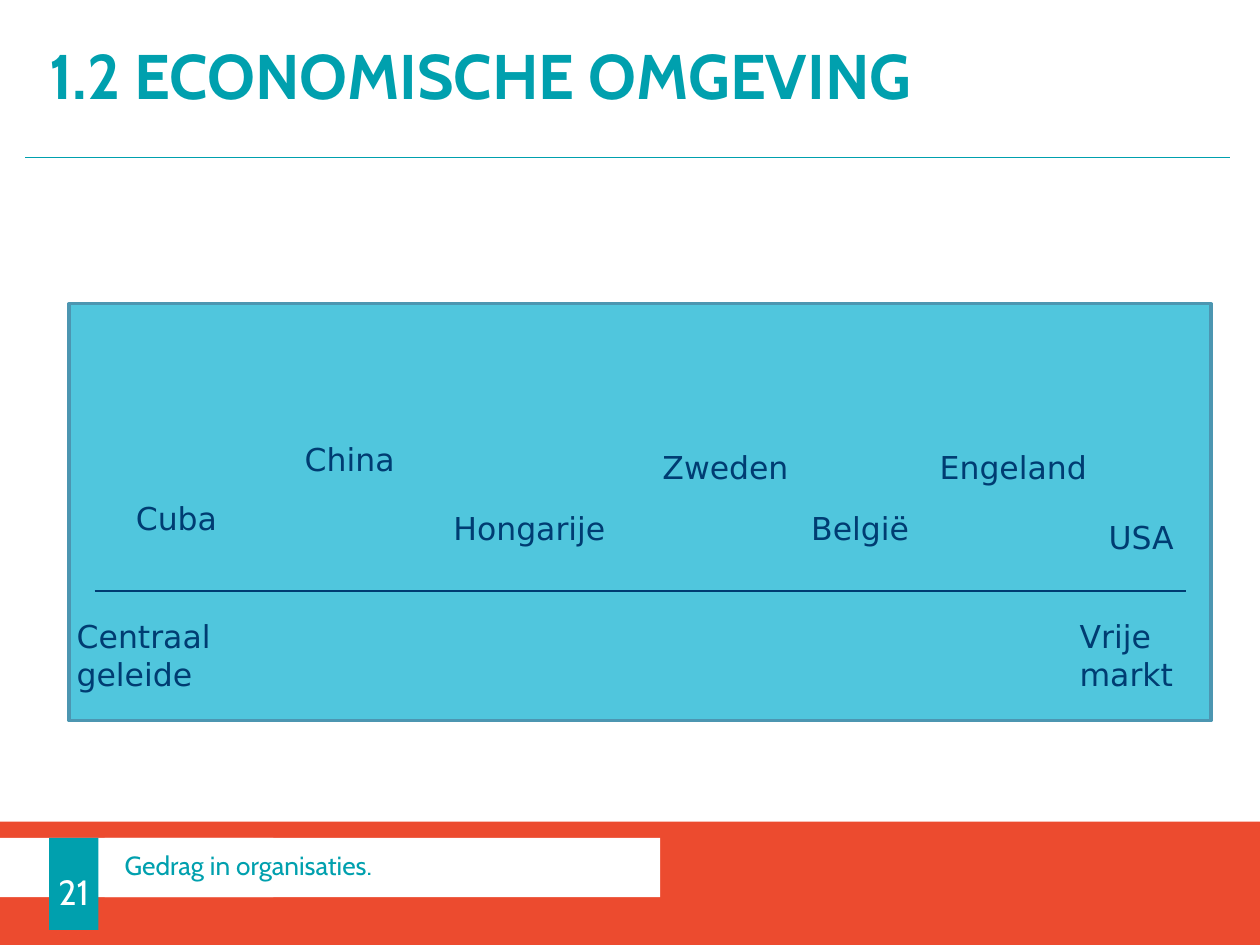
from pptx import Presentation
from pptx.dml.color import RGBColor
from pptx.enum.shapes import MSO_CONNECTOR as LINE, MSO_SHAPE as SHAPE
from pptx.enum.text import MSO_ANCHOR as ANCHOR, MSO_AUTO_SIZE as FIT, PP_ALIGN as ALIGN
from pptx.oxml.ns import qn
from pptx.util import Inches, Pt
from lxml.etree import SubElement

TEAL, NAVY, WHITE = "00A0AE", "003C72", "FFFFFF"

deck = Presentation()
deck.slide_width, deck.slide_height = Inches(10), Inches(7.5)
column, row = deck.slide_width / 100, deck.slide_height / 75
slide = deck.slides.add_slide(deck.slide_layouts[5])
shapes = slide.shapes


def grid(left, top, width, height):
    return [round(n * unit) for n, unit in zip((left, top, width, height), (column, row) * 2)]


def paint(target, color):
    if hasattr(target, "solid"):
        target.solid()
        target.fore_color.rgb = RGBColor.from_string(color)
    else:
        target.color.rgb = RGBColor.from_string(color)


bands = []
for area, color in [
    ((0, 65.2, 100, 9.8), "EC4B2F"),
    ((0, 66.5, 21.7, 4.7), WHITE),
    ((5.5, 24.1, 90.6, 33.1), "50C6DD"),
    ((3.9, 66.5, 3.9, 7.3), TEAL),
    ((8.3, 66.5, 44.1, 4.7), WHITE),
]:
    band = shapes.add_shape(SHAPE.RECTANGLE, *grid(*area))
    band.shadow.inherit = False
    paint(band.fill, color)
    band.line.fill.background()
    bands.append(band)
spectrum, page_number, footer = bands[2:]
paint(spectrum.line, "4C96B1")
spectrum.line.width = Pt(2)

for left, right, height, color, weight in [
    (2, 97.6, 12.5, TEAL, 0.5),
    (7.5, 94.1, 46.9, NAVY, 0.75),
]:
    rule = shapes.add_connector(LINE.STRAIGHT, *grid(left, height, right, height))
    paint(rule.line, color)
    rule.line.width = Pt(weight)
    SubElement(rule._element.spPr, qn("a:effectLst"))

title = shapes.title
title.left, title.top, title.width, title.height = grid(0, 0, 100, 12.5)

for part, text, size, color, insets, spacing, align in [
    (title, "1.2 ECONOMISCHE OMGEVING", 36, TEAL, (3.9, 2, 3.9, 1.6), 0.8, ALIGN.LEFT),
    (page_number, "21", 20, WHITE, (0, 1.2, 0, 0), 1, ALIGN.CENTER),
    (footer, "Gedrag in organisaties.", 15, TEAL, (1.6, 0, 1.6, 0), 0.9, ALIGN.LEFT),
]:
    frame = part.text_frame
    frame.text = text
    frame.auto_size = FIT.NONE
    frame.word_wrap = part is not page_number
    frame.vertical_anchor = ANCHOR.MIDDLE
    frame.margin_left, frame.margin_top, frame.margin_right, frame.margin_bottom = grid(*insets)
    line = frame.paragraphs[0]
    line.alignment, line.line_spacing = align, spacing
    font = line.runs[0].font
    font.name, font.size, font.bold = "Cabin", Pt(size), part is title
    paint(font.fill, color)

for text, left, top, width, height in [
    ("Centraal geleide", 5.1, 48.5, 13.8, 7),
    ("Vrije markt", 84.7, 48.5, 15.3, 4),
    ("Cuba", 9.8, 39.1, 8.7, 4),
    ("China", 23.2, 34.4, 9.4, 4),
    ("Hongarije", 35, 39.9, 14.2, 4),
    ("Zweden", 51.6, 35.1, 13.4, 4),
    ("België", 63.4, 39.9, 11, 4),
    ("Engeland", 73.6, 35.1, 15.7, 4),
    ("USA", 87, 40.6, 7.9, 4),
]:
    frame = shapes.add_textbox(*grid(left, top, width, height)).text_frame
    frame.text = text
    frame.word_wrap = True
    frame.auto_size = FIT.SHAPE_TO_FIT_TEXT
    font = frame.paragraphs[0].runs[0].font
    font.name, font.size = "DejaVu Sans", Pt(18)
    paint(font.fill, NAVY)

deck.save("out.pptx")
